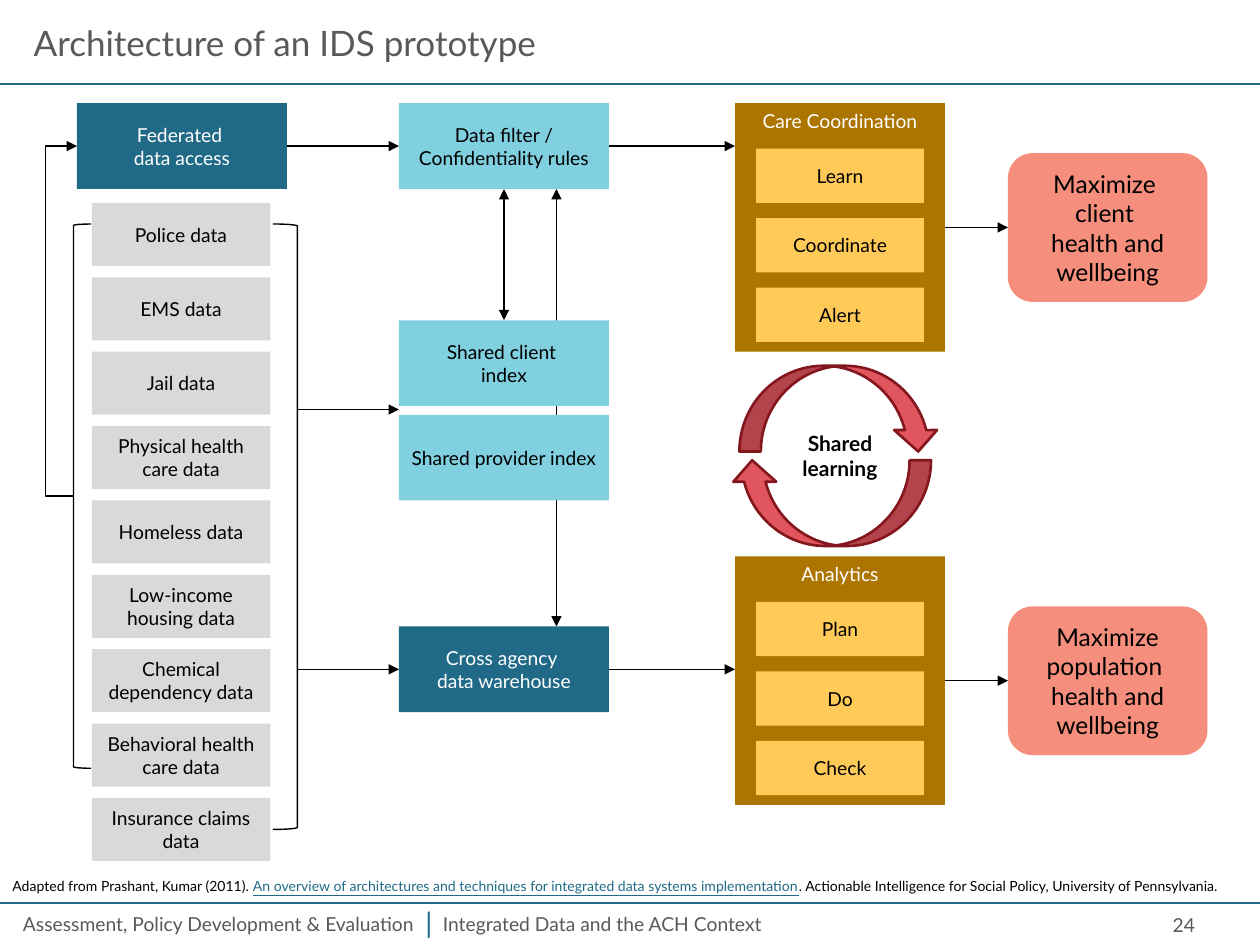
from lxml import etree
from pptx import Presentation
from pptx.dml.color import RGBColor
from pptx.enum.shapes import MSO_CONNECTOR, MSO_SHAPE
from pptx.enum.text import MSO_ANCHOR, MSO_AUTO_SIZE, PP_ALIGN
from pptx.oxml.ns import qn
from pptx.util import Pt

STRAIGHT, ELBOW = MSO_CONNECTOR.STRAIGHT, MSO_CONNECTOR.ELBOW
RECT, ROUNDED = MSO_SHAPE.RECTANGLE, MSO_SHAPE.ROUNDED_RECTANGLE
LEFT_BRACKET, RIGHT_BRACKET = MSO_SHAPE.LEFT_BRACKET, MSO_SHAPE.RIGHT_BRACKET
CURVED_ARROW = MSO_SHAPE.CURVED_DOWN_ARROW
TOP, MIDDLE = MSO_ANCHOR.TOP, MSO_ANCHOR.MIDDLE
LEFT, CENTER, RIGHT = PP_ALIGN.LEFT, PP_ALIGN.CENTER, PP_ALIGN.RIGHT
TOP_SIDE, LEFT_SIDE, BOTTOM_SIDE, RIGHT_SIDE = range(4)

FONT = "Lato"
COLORS = {
    "black": "000000", "white": "FFFFFF", "text": "595959", "teal": "206A87",
    "aqua": "80D0E0", "grey": "D9D9D9", "brown": "AC7500", "amber": "FFCA58",
    "coral": "F58E7C", "red": "E1555E", "dark_red": "84171E",
}
SOURCES = [
    "Police data", "EMS data", "Jail data", "Physical health care data",
    "Homeless data", "Low-income housing data", "Chemical dependency data",
    "Behavioral health care data", "Insurance claims data",
]
STEP_W, STEP_H = 120, 49
ACCESS_X, EXCHANGE_X, USE_X, GOAL_X = 44, 228, 420, 576
FLOW_TOP, CLIENT_TOP, PROVIDER_TOP, WAREHOUSE_TOP = 59, 183, 237, 358
FLOW_Y = FLOW_TOP + STEP_H / 2
WAREHOUSE_Y = WAREHOUSE_TOP + STEP_H / 2
PANEL_H, GOAL_H = 142, 85


def rgb(name):
    return RGBColor.from_string(COLORS[name])


def add_run(paragraph, text, size, color, bold=False, underline=False):
    run = paragraph.add_run()
    run.text = text
    font = run.font
    font.name, font.size, font.bold = FONT, Pt(size), bold
    font.color.rgb = rgb(color)
    if underline:
        font.underline = True


def write_lines(frame, lines, size, color, align=CENTER, bold=False):
    for index, line in enumerate(lines):
        paragraph = frame.add_paragraph() if index else frame.paragraphs[0]
        paragraph.alignment = align
        add_run(paragraph, line, size, color, bold)


def add_label(slide, box, lines, size, color, align=LEFT, anchor=TOP, bold=False, inset=None):
    label = slide.shapes.add_textbox(*map(Pt, box))
    frame = label.text_frame
    frame.word_wrap = True
    frame.vertical_anchor = anchor
    if inset is not None:
        frame.margin_left = frame.margin_right = Pt(inset)
        frame.margin_top = frame.margin_bottom = Pt(inset)
    write_lines(frame, lines, size, color, align, bold)
    return frame


def add_block(slide, box, lines, fill, color="black", size=11, kind=RECT, anchor=MIDDLE):
    block = slide.shapes.add_shape(kind, *map(Pt, box))
    block.shadow.inherit = False
    block.fill.solid()
    block.fill.fore_color.rgb = rgb(fill)
    block.line.fill.background()
    block.text_frame.word_wrap = True
    block.text_frame.vertical_anchor = anchor
    write_lines(block.text_frame, lines, size, color)
    return block


def add_outline(slide, kind, box, line, width, fill=None, rotation=0):
    outline = slide.shapes.add_shape(kind, *map(Pt, box))
    outline.shadow.inherit = False
    if fill:
        outline.fill.solid()
        outline.fill.fore_color.rgb = rgb(fill)
    else:
        outline.fill.background()
    outline.line.color.rgb = rgb(line)
    outline.line.width = Pt(width)
    outline.rotation = rotation


def add_line(slide, start, end, color="black", width=0.79, heads=(), kind=STRAIGHT,
             begin=None, finish=None):
    """heads lists the arrowed ends; begin and finish are (shape, side) joins."""
    line = slide.shapes.add_connector(kind, *map(Pt, (*start, *end)))
    line.line.color.rgb = rgb(color)
    line.line.width = Pt(width)
    outline = line.line._get_or_add_ln()
    for head in heads:
        etree.SubElement(outline, qn(f"a:{head}"), type="triangle")
    etree.SubElement(line._element.spPr, qn("a:effectLst"))
    if begin:
        line.begin_connect(*begin)
    if finish:
        line.end_connect(*finish)
    return line


def add_flow(slide, start, end, begin=None, finish=None, both=False):
    heads = ("headEnd", "tailEnd") if both else ("tailEnd",)
    return add_line(slide, start, end, heads=heads, begin=begin, finish=finish)


def add_use(slide, top, heading, tasks, goal_lines):
    """A panel of three tasks with an arrow to its goal."""
    panel = add_block(slide, (USE_X, top, STEP_W, PANEL_H), [heading], "brown", "white",
                      anchor=TOP)
    for index, task in enumerate(tasks):
        add_block(slide, (USE_X + 12, top + 26 + 39.7 * index, 96, 31), [task], "amber")
    middle = top + PANEL_H / 2
    goal = add_block(slide, (GOAL_X, middle - GOAL_H / 2, 114, GOAL_H), goal_lines, "coral",
                     size=14, kind=ROUNDED)
    add_flow(slide, (USE_X + STEP_W, middle), (GOAL_X, middle),
             (panel, RIGHT_SIDE), (goal, LEFT_SIDE))


def add_frame(slide):
    # Title and rules
    title = slide.shapes.title
    title.left, title.top, title.width, title.height = map(Pt, (12, 12, 696, 24))
    title.text_frame.auto_size = MSO_AUTO_SIZE.NONE
    title.text_frame.vertical_anchor = MIDDLE
    write_lines(title.text_frame, ["Architecture of an IDS prototype"], 20, "text", LEFT)
    for y in (48, 516):
        add_line(slide, (0, y), (720, y), "teal", 1.5)

    # Footer
    add_label(slide, (6, 517.5, 258, 21), ["Assessment, Policy Development & Evaluation"],
              11, "text")
    add_label(slide, (246, 517.5, 366, 21), ["Integrated Data and the ACH Context"], 11, "text")
    add_label(slide, (233, 514, 24, 27), ["|"], 16, "teal", CENTER)
    add_label(slide, (522, 517.5, 168, 21.5), ["24"], 11, "text", RIGHT, MIDDLE)

    # Citation
    citation = add_label(slide, (0, 498, 710, 17), ["Adapted from Prashant, Kumar (2011). "],
                         8, "black").paragraphs[0]
    add_run(citation, "An overview of architectures and techniques for integrated data systems "
            "implementation", 8, "teal", underline=True)
    add_run(citation, ". Actionable Intelligence for Social Policy, University of Pennsylvania.",
            8, "black")


def add_access(slide):
    """Data sources, their brackets and the federated access step."""
    for index, source in enumerate(SOURCES):
        add_block(slide, (52.5, 116 + 42.5 * index, 102, 36), [source], "grey")
    access = add_block(slide, (ACCESS_X, FLOW_TOP, STEP_W, STEP_H),
                       ["Federated ", "data access"], "teal", "white")
    add_outline(slide, RIGHT_BRACKET, (156, 128, 14, 346), "black", 0.79)
    add_outline(slide, LEFT_BRACKET, (42, 128, 10, 311), "black", 0.79)
    loop = add_line(slide, (42, 283.5), (ACCESS_X, FLOW_Y), heads=("tailEnd",), kind=ELBOW)
    # The loop's upright stands 16 pt left of its start, as a share of its 2 pt width
    guides = loop._element.spPr.find(qn("a:prstGeom")).get_or_add_avLst()
    etree.SubElement(guides, qn("a:gd"), name="adj1", fmla="val -800000")
    return access


def add_exchange(slide, access):
    """Filter, shared indexes and warehouse, with the flows between them."""
    add_flow(slide, (318, FLOW_TOP + STEP_H), (318, WAREHOUSE_TOP), both=True)
    steps = [
        (FLOW_TOP, ["Data filter / Confidentiality rules"], "aqua", "black"),
        (CLIENT_TOP, ["Shared client ", "index"], "aqua", "black"),
        (PROVIDER_TOP, ["Shared provider index"], "aqua", "black"),
        (WAREHOUSE_TOP, ["Cross agency ", "data warehouse"], "teal", "white"),
    ]
    data_filter, client, _, warehouse = [
        add_block(slide, (EXCHANGE_X, top, STEP_W, STEP_H), lines, fill, color)
        for top, lines, fill, color in steps
    ]
    right, center = EXCHANGE_X + STEP_W, EXCHANGE_X + STEP_W / 2
    add_flow(slide, (ACCESS_X + STEP_W, FLOW_Y), (EXCHANGE_X, FLOW_Y),
             (access, RIGHT_SIDE), (data_filter, LEFT_SIDE))
    add_flow(slide, (170, 234), (EXCHANGE_X, 234))
    add_flow(slide, (170, WAREHOUSE_Y), (EXCHANGE_X, WAREHOUSE_Y), finish=(warehouse, LEFT_SIDE))
    add_flow(slide, (center, FLOW_TOP + STEP_H), (center, CLIENT_TOP),
             (data_filter, BOTTOM_SIDE), (client, TOP_SIDE), both=True)
    for step, y in ((data_filter, FLOW_Y), (warehouse, WAREHOUSE_Y)):
        add_flow(slide, (right, y), (USE_X, y), (step, RIGHT_SIDE))


def add_learning_cycle(slide):
    for left, top, rotation in ((422.5, 209, 0), (417.5, 263, 180)):
        add_outline(slide, CURVED_ARROW, (left, top, 114.5, 49), "dark_red", 1.5, "red", rotation)
    add_label(slide, (442, 246, 76, 29), ["Shared learning"], 12, "black", CENTER,
              bold=True, inset=0)


def main():
    deck = Presentation()
    deck.slide_width, deck.slide_height = Pt(720), Pt(540)
    slide = deck.slides.add_slide(deck.slide_layouts[5])
    add_frame(slide)
    access = add_access(slide)
    add_exchange(slide, access)
    add_use(slide, FLOW_TOP, "Care Coordination", ["Learn", "Coordinate", "Alert"],
            ["Maximize ", "client ", "health and wellbeing"])
    add_use(slide, 318, "Analytics", ["Plan", "Do", "Check"],
            ["Maximize population ", "health and wellbeing"])
    add_learning_cycle(slide)
    deck.save("out.pptx")


if __name__ == "__main__":
    main()
